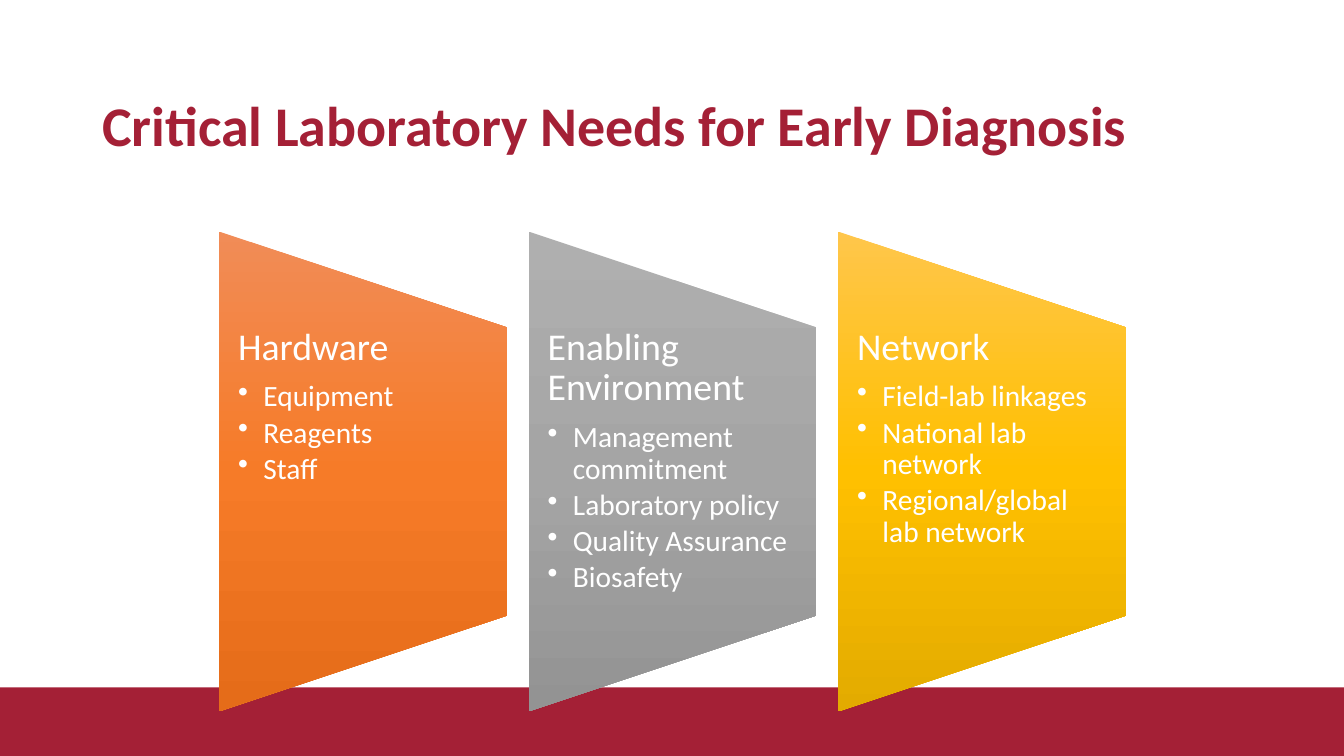
from typing import NamedTuple

from lxml import etree
from pptx import Presentation
from pptx import util as u
from pptx.dml.color import RGBColor
from pptx.enum import shapes, text
from pptx.oxml import ns

COLOURS = {"crimson": "A42036", "white": "FFFFFF"}
FONT = "Calibri"

# Panel geometry in centimetres
PANEL_LEFT, PANEL_PITCH = 5.52, 7.8
PANEL_WIDTH, PANEL_HEIGHT = 7.26, 12.09
PANEL_MIDDLE = 11.88
BULLET_INDENT = 0.64


class Panel(NamedTuple):
    heading: str
    items: tuple[str, ...]
    gradient: tuple[str, str, str]


PANELS = (
    Panel("Hardware", ("Equipment", "Reagents", "Staff"),
          ("F18C57", "F67B28", "E56C19")),
    Panel("Enabling Environment",
          ("Management commitment", "Laboratory policy", "Quality Assurance", "Biosafety"),
          ("AFAFAF", "A5A5A5", "939393")),
    Panel("Network",
          ("Field-lab linkages", "National lab network", "Regional/global lab network"),
          ("FFC64B", "FFC000", "E3AB00")),
)


def style_para(para, size: float, colour: str, bold: bool = False) -> None:
    para.line_spacing = 0.9
    para.font.name = FONT
    para.font.size = u.Pt(size)
    para.font.bold = bold
    para.font.color.rgb = RGBColor.from_string(COLOURS[colour])


def add_bullet(para) -> None:
    properties = para._p.get_or_add_pPr()
    properties.set("marL", str(u.Cm(BULLET_INDENT)))
    properties.set("indent", str(-u.Cm(BULLET_INDENT)))
    etree.SubElement(properties, ns.qn("a:buChar")).set("char", "•")


def fill_gradient(shape, stops: tuple[str, str, str]) -> None:
    """Shade from top to bottom of the page, whatever the shape's rotation."""
    shape.fill.gradient()
    gradient = shape._element.spPr.find(ns.qn("a:gradFill"))
    gradient.set("rotWithShape", "0")
    stop_list = gradient.find(ns.qn("a:gsLst"))
    for old_stop in list(stop_list):
        stop_list.remove(old_stop)
    for index, colour in enumerate(stops):
        stop = etree.SubElement(stop_list, ns.qn("a:gs"), pos=str(index * 50000))
        etree.SubElement(stop, ns.qn("a:srgbClr"), val=colour)
    gradient.find(ns.qn("a:lin")).set("ang", "5400000")


def add_footer(page) -> None:
    band = page.shapes.add_shape(shapes.MSO_SHAPE.RECTANGLE,
                                 0, u.Cm(17.32), u.Cm(33.87), u.Cm(1.73))
    band.shadow.inherit = False
    band.fill.solid()
    band.fill.fore_color.rgb = RGBColor.from_string(COLOURS["crimson"])
    band.line.fill.background()


def add_title(page) -> None:
    box = page.shapes.add_textbox(u.Cm(2.33), u.Cm(1.4), u.Cm(29.21), u.Cm(3.68))
    frame = box.text_frame
    frame.word_wrap = True
    frame.vertical_anchor = text.MSO_ANCHOR.MIDDLE
    frame.text = "Critical Laboratory Needs for Early Diagnosis"
    style_para(frame.paragraphs[0], 40, "crimson", bold=True)


def add_panel(page, panel: Panel, left: float) -> None:
    # Trapezoid, turned so that its wide side faces left
    trapezoid = page.shapes.add_shape(
        shapes.MSO_SHAPE.FLOWCHART_MANUAL_OPERATION,
        u.Cm(left + (PANEL_WIDTH - PANEL_HEIGHT) / 2), u.Cm(PANEL_MIDDLE - PANEL_WIDTH / 2),
        u.Cm(PANEL_HEIGHT), u.Cm(PANEL_WIDTH))
    trapezoid.rotation = 270
    trapezoid.shadow.inherit = False
    trapezoid.line.fill.background()
    fill_gradient(trapezoid, panel.gradient)

    # Heading and bullets
    box = page.shapes.add_textbox(u.Cm(left), u.Cm(PANEL_MIDDLE - PANEL_WIDTH / 2),
                                  u.Cm(PANEL_WIDTH), u.Cm(PANEL_WIDTH))
    frame = box.text_frame
    frame.word_wrap = True
    frame.margin_left = frame.margin_right = u.Cm(0.48)
    frame.margin_top = frame.margin_bottom = 0
    frame.text = panel.heading
    heading = frame.paragraphs[0]
    style_para(heading, 27, "white")
    heading.space_after = u.Pt(9.45)
    for item in panel.items:
        para = frame.add_paragraph()
        para.text = item
        para.level = 1
        style_para(para, 21, "white")
        para.space_after = u.Pt(3.15)
        add_bullet(para)


def main() -> None:
    deck = Presentation()
    deck.slide_width, deck.slide_height = u.Cm(33.87), u.Cm(19.05)
    page = deck.slides.add_slide(deck.slide_layouts[6])
    add_footer(page)
    add_title(page)
    for index, panel in enumerate(PANELS):
        add_panel(page, panel, PANEL_LEFT + index * PANEL_PITCH)
    deck.save("out.pptx")


if __name__ == "__main__":
    main()
